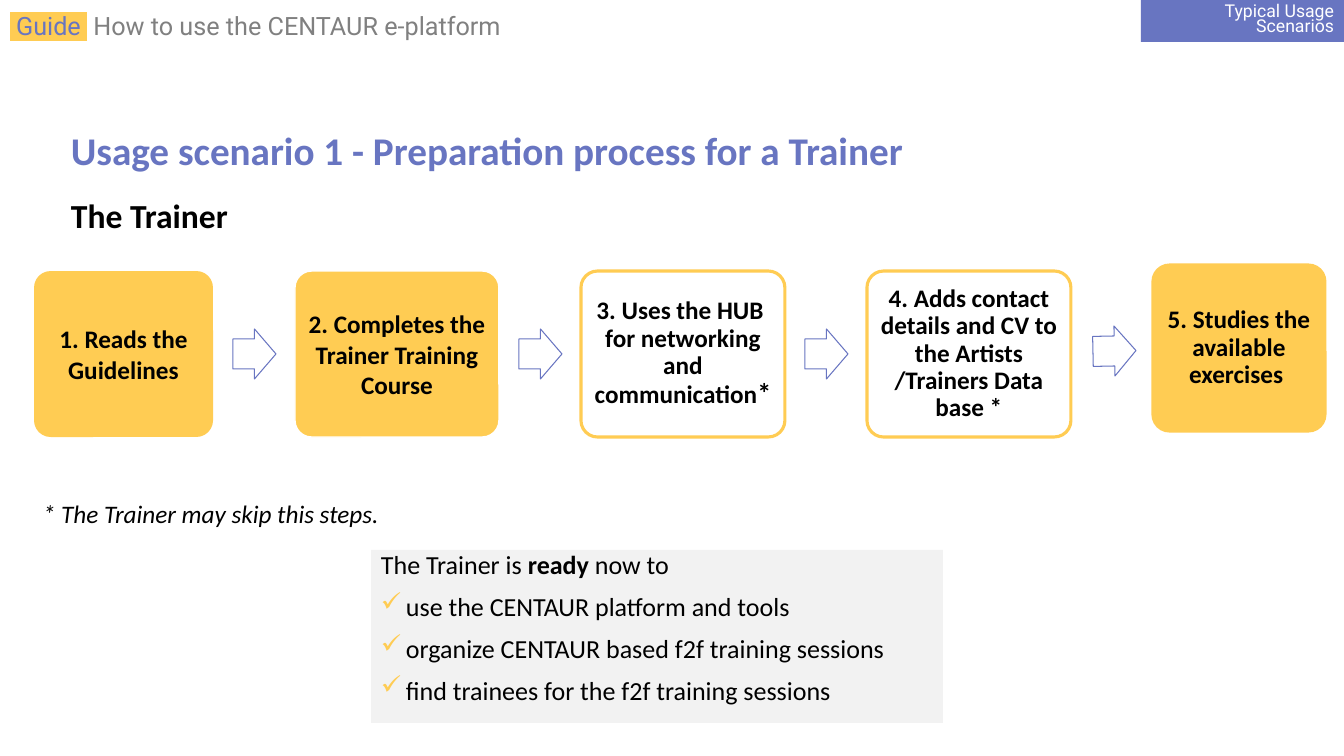
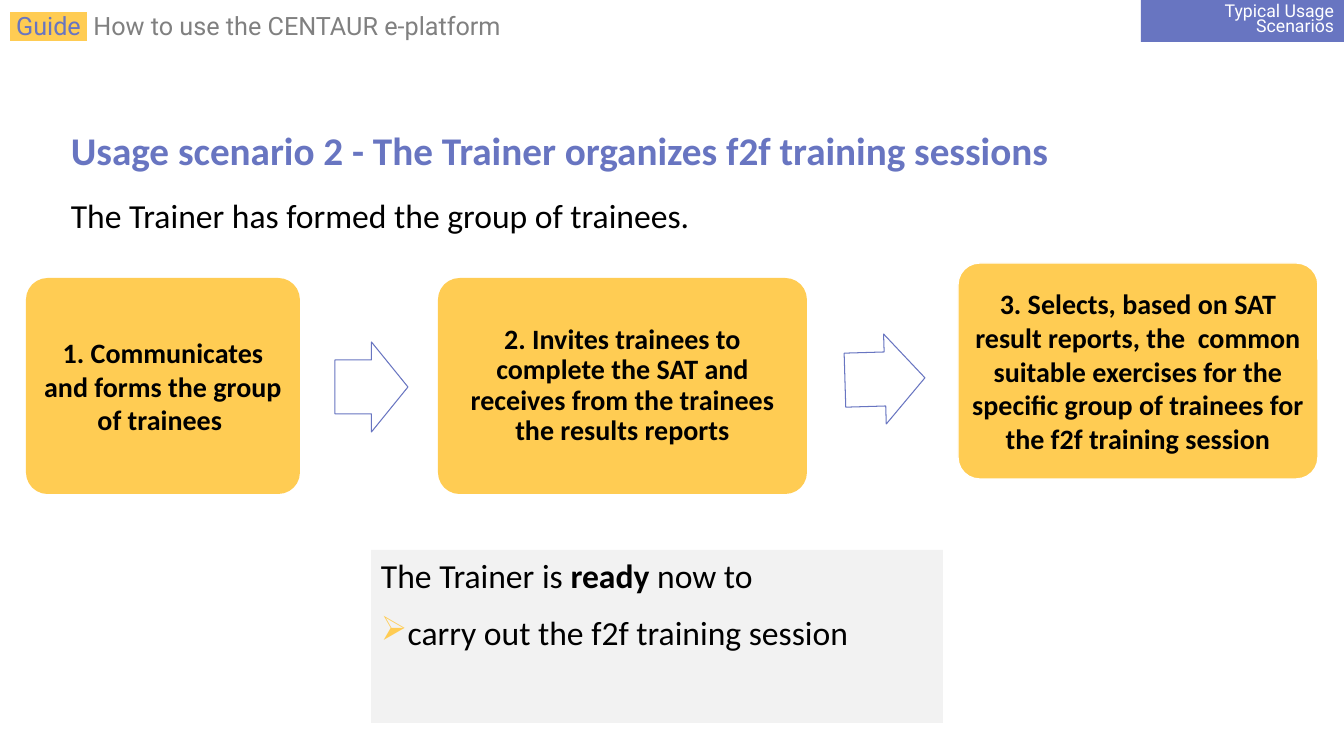
from lxml.etree import SubElement
from pptx import Presentation
from pptx.dml.color import RGBColor
from pptx.enum.shapes import MSO_SHAPE as Shape
from pptx.enum.text import MSO_ANCHOR as Anchor, PP_ALIGN as Align
from pptx.oxml.ns import qn
from pptx.util import Pt

PX = 914400 / 100.8
COLORS = {"blue": "6875C1", "yellow": "FFCC53", "panel": "F2F2F2",
          "gray": "808080", "white": "FFFFFF", "black": "000000"}
STEP_TOP_SHIFT = 6

SCENARIOS = [
    {
        "title": "Usage scenario 1 - Preparation process for a Trainer",
        "intro": ("The Trainer", {"bold": True}),
        "note": "* The Trainer may skip this steps.",
        "step_size": 18,
        # left, top, width, height, fill, outline, line spacing, text spans
        "steps": [
            (34, 271, 179, 166, "yellow", None, 1, [("1. Reads the Guidelines", {})]),
            (295, 271, 204, 166, "yellow", "white", 1,
             [("2. Completes the Trainer Training Course", {})]),
            (581, 271, 204, 166, None, "yellow", 0.9,
             [("3. Uses the HUB  for networking and communication", {}),
              ("*", {"size": Pt(20)})]),
            (867, 271, 204, 166, None, "yellow", 0.9,
             [("4. Adds contact details and CV to the Artists /Trainers Data base *", {})]),
            (1153, 265, 172, 166, "yellow", "yellow", 0.9,
             [("5. Studies the available exercises ", {})]),
        ],
        # left, top, width, height, rotation
        "arrows": [(233, 329, 43, 50, 0), (519, 329, 43, 50, 0),
                   (805, 329, 43, 50, 0), (1093, 326, 43, 50, -1.2)],
        "ready": {"size": 18.6, "spacing": 0.8, "bullet": "✓",
                  "items": ["use the CENTAUR platform and tools",
                            "organize CENTAUR based f2f training sessions",
                            "find trainees for the f2f training sessions"]},
    },
    {
        "title": "Usage scenario 2 - The Trainer organizes f2f training sessions",
        "intro": ("The Trainer has formed the group of trainees.", {}),
        "note": None,
        "step_size": 20,
        "steps": [
            (26, 278, 274, 216, "yellow", None, 1,
             [("1. Communicates and forms the group of trainees ", {})]),
            (438, 278, 369, 216, "yellow", None, 0.9,
             [("2. Invites trainees to complete the SAT and receives from the "
               "trainees the results reports", {})]),
            (958, 263, 360, 216, "yellow", "white", 1,
             [("3. Selects, based on SAT result reports, the  common suitable exercises "
               "for the specific group of trainees for the f2f training session", {})]),
        ],
        "arrows": [(335, 342, 73, 90, 0), (845, 334, 80, 90, -1.7)],
        "ready": {"size": 24, "spacing": 1, "bullet": "➢",
                  "items": ["carry out the f2f training session"]},
    },
]


def add_box(page, left, top, width, height, kind=None, fill=None, line=None, line_width=1):
    """Add a preset shape, or a plain text box when kind is None; lengths in px."""
    place = [round(length * PX) for length in (left, top, width, height)]
    if kind is None:
        box = page.shapes.add_textbox(*place)
    else:
        box = page.shapes.add_shape(kind, *place)
        box.shadow.inherit = False
        if fill:
            box.fill.solid()
            box.fill.fore_color.rgb = RGBColor.from_string(COLORS[fill])
        else:
            box.fill.background()
        if line:
            box.line.color.rgb = RGBColor.from_string(COLORS[line])
            box.line.width = Pt(line_width)
        else:
            box.line.fill.background()
    box.text_frame.word_wrap = True
    box.text_frame.vertical_anchor = Anchor.TOP
    return box


def write(box, spans, size, color="black", font="Calibri", bullet=None, **layout):
    """Write one paragraph of (text, format) spans; layout holds paragraph attributes."""
    frame = box.text_frame
    para = frame.paragraphs[0] if not frame.text else frame.add_paragraph()
    for name, value in {"alignment": Align.LEFT, **layout}.items():
        setattr(para, name, value)
    if bullet:
        props = para._p.get_or_add_pPr()
        indent = round(25 * PX)
        props.set("marL", str(indent))
        props.set("indent", str(-indent))
        bullet_color = SubElement(props, qn("a:buClr"))
        SubElement(bullet_color, qn("a:srgbClr"), val=COLORS["yellow"])
        SubElement(props, qn("a:buChar"), char=bullet)
    for text, changes in spans:
        span = para.add_run()
        span.text = text
        look = {"name": font, "size": Pt(size), "color": color, **changes}
        span.font.color.rgb = RGBColor.from_string(COLORS[look.pop("color")])
        highlight = look.pop("highlight", None)
        if highlight:
            mark = SubElement(span._r.get_or_add_rPr(), qn("a:highlight"))
            SubElement(mark, qn("a:srgbClr"), val=COLORS[highlight])
        for name, value in look.items():
            setattr(span.font, name, value)


deck = Presentation()
deck.slide_width, deck.slide_height = round(1344 * PX), round(756 * PX)

for scenario in SCENARIOS:
    page = deck.slides.add_slide(deck.slide_layouts[6])

    header = add_box(page, 0, 11, 960, 35)
    write(header, [(" Guide ", {"color": "blue", "highlight": "yellow"}),
                   (" How to use the CENTAUR e-platform", {})],
          18, "gray", "Roboto", line_spacing=0.8)

    title = add_box(page, 61, 119, 1220, 67)
    title.text_frame.vertical_anchor = Anchor.MIDDLE
    write(title, [(scenario["title"], {"bold": True})], 28, "blue", line_spacing=0.9)

    write(add_box(page, 61, 190, 1048, 50), [scenario["intro"]], 24)

    ready = scenario["ready"]
    panel = add_box(page, 371, 550, 572, 173, Shape.RECTANGLE, "panel")
    write(panel, [("The Trainer is ", {}), ("ready", {"bold": True}), (" now to", {})],
          ready["size"], line_spacing=ready["spacing"], space_after=Pt(6))
    for item in ready["items"]:
        write(panel, [(item, {})], ready["size"], bullet=ready["bullet"],
              line_spacing=ready["spacing"], space_before=Pt(6), space_after=Pt(6))

    for left, top, width, height, fill, line, spacing, spans in scenario["steps"]:
        step = add_box(page, left, top, width, height, Shape.ROUNDED_RECTANGLE,
                       fill, line, 1 if line == "white" else 2.25)
        step.adjustments[0] = 0.1
        frame = step.text_frame
        frame.vertical_anchor = Anchor.MIDDLE
        for side in ("left", "top", "right", "bottom"):
            setattr(frame, f"margin_{side}", round(7 * PX))
        write(step, [(text, {"bold": True, **changes}) for text, changes in spans],
              scenario["step_size"], alignment=Align.CENTER, line_spacing=spacing)

    for left, top, width, height, rotation in scenario["arrows"]:
        arrow = add_box(page, left, top, width, height, Shape.RIGHT_ARROW,
                        line="blue", line_width=0.75)
        arrow.adjustments[0] = 0.6
        arrow.rotation = rotation

    if scenario["note"]:
        write(add_box(page, 33, 493, 674, 40), [(scenario["note"], {"italic": True})], 18)

    tag = add_box(page, 1141, 0, 203, 42, Shape.RECTANGLE, "blue")
    tag.text_frame.vertical_anchor = Anchor.MIDDLE
    write(tag, [("Typical Usage Scenarios", {})], 12.6, "white", "Roboto",
          alignment=Align.RIGHT, line_spacing=0.7)

deck.save("out.pptx")
